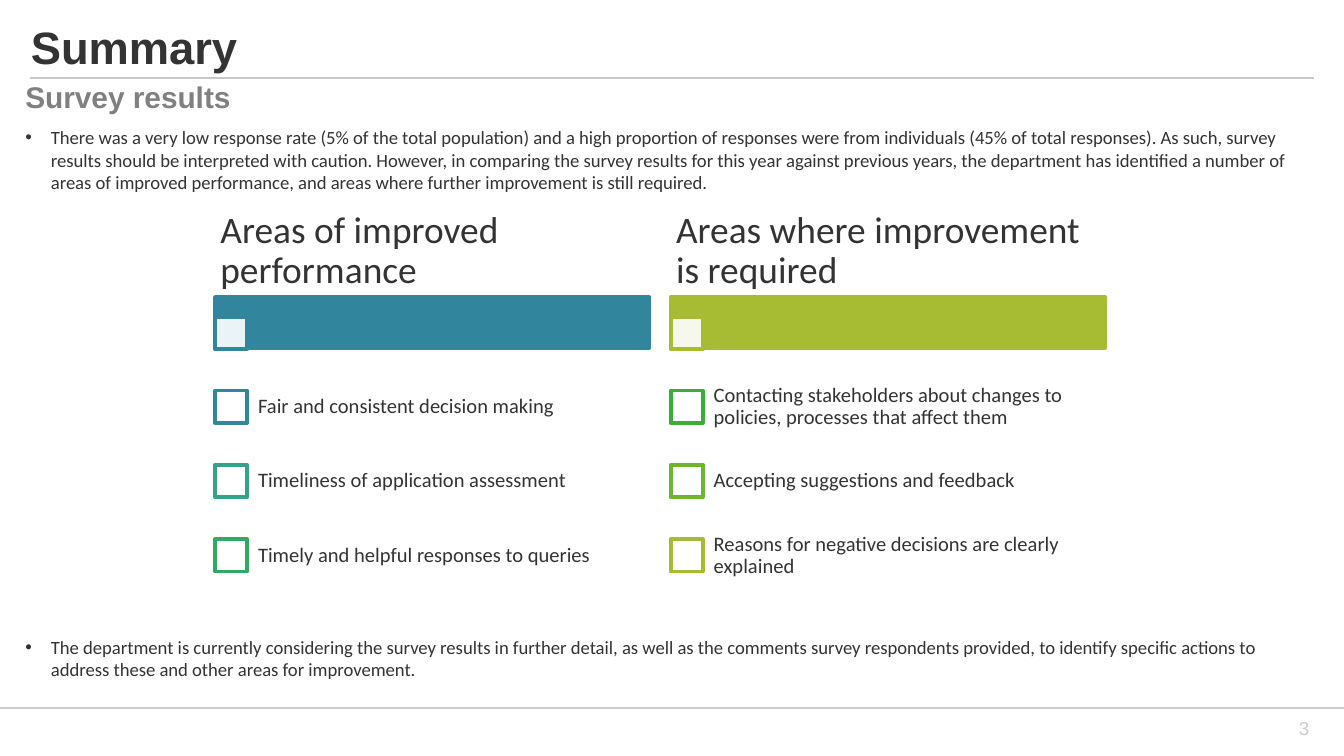
from lxml import etree
from pptx import Presentation
from pptx.dml.color import RGBColor
from pptx.enum import shapes, text
from pptx.oxml import ns
from pptx.util import Inches, Pt

WHITE = RGBColor(0xFF, 0xFF, 0xFF)
INK = RGBColor(0x33, 0x33, 0x33)
GREY = RGBColor(0x80, 0x80, 0x80)
RULE = RGBColor(0xC8, 0xC8, 0xC8)
PALE = RGBColor(0xCC, 0xCC, 0xCC)
BLUE = RGBColor(0x31, 0x85, 0x9C)
TEAL = RGBColor(0x32, 0xA2, 0x8C)
SEA = RGBColor(0x32, 0xA9, 0x60)
GREEN = RGBColor(0x36, 0xAF, 0x32)
LEAF = RGBColor(0x6C, 0xB5, 0x33)
OLIVE = RGBColor(0xA8, 0xBC, 0x33)

MIDDLE = text.MSO_ANCHOR.MIDDLE
INDENT = 0.19
SQUARE = 0.24
LIST_HEIGHT = 1.66

SURVEY_NOTE = (
    "There was a very low response rate (5% of the total population) and a high "
    "proportion of responses were from individuals (45% of total responses). As such, "
    "survey results should be interpreted with caution. However, in comparing the survey "
    "results for this year against previous years, the department has identified a number "
    "of areas of improved performance, and areas where further improvement is still required."
)
NEXT_STEPS = (
    "The department is currently considering the survey results in further detail, as well "
    "as the comments survey respondents provided, to identify specific actions to address "
    "these and other areas for improvement."
)
COLUMNS = [
    ("Areas of improved performance", BLUE, [
        ("Fair and consistent decision making", BLUE),
        ("Timeliness of application assessment", TEAL),
        ("Timely and helpful responses to queries", SEA),
    ]),
    ("Areas where improvement is required", OLIVE, [
        ("Contacting stakeholders about changes to policies, processes that affect them", GREEN),
        ("Accepting suggestions and feedback", LEAF),
        ("Reasons for negative decisions are clearly explained", OLIVE),
    ]),
]


def add_line(page, left, right, top, color, width):
    line = page.shapes.add_connector(
        shapes.MSO_CONNECTOR.STRAIGHT, Inches(left), Inches(top), Inches(right), Inches(top))
    line.line.color.rgb = color
    line.line.width = Pt(width)
    etree.SubElement(line._element.spPr, ns.qn("a:effectLst"))


def add_frame(page, box, insets=(0.1, 0.05, 0.1, 0.05), anchor=text.MSO_ANCHOR.TOP):
    """Add an empty wrapping text box; insets run left, top, right, bottom."""
    frame = page.shapes.add_textbox(*map(Inches, box)).text_frame
    frame.word_wrap = True
    frame.vertical_anchor = anchor
    (frame.margin_left, frame.margin_top,
     frame.margin_right, frame.margin_bottom) = map(Inches, insets)
    return frame


def write(para, words, size, color=INK, name="Calibri", bold=False):
    para.text = words
    font = para.runs[0].font
    font.size, font.name, font.bold = Pt(size), name, bold
    font.color.rgb = color


def write_bullet(para, words):
    props = para._p.get_or_add_pPr()
    props.set("marL", str(Inches(INDENT)))
    props.set("indent", str(-Inches(INDENT)))
    etree.SubElement(props, ns.qn("a:buFont")).set("typeface", "Arial")
    etree.SubElement(props, ns.qn("a:buChar")).set("char", "•")
    write(para, words, 10)


def add_rect(page, box, fill, line, opacity=100):
    rect = page.shapes.add_shape(shapes.MSO_SHAPE.RECTANGLE, *map(Inches, box))
    rect.shadow.inherit = False
    rect.fill.solid()
    rect.fill.fore_color.rgb = fill
    rect.line.color.rgb = line
    rect.line.width = Pt(2)
    if opacity < 100:
        color = rect._element.spPr.find(ns.qn("a:solidFill"))[0]
        etree.SubElement(color, ns.qn("a:alpha")).set("val", str(opacity * 1000))


def add_header(page, left, top, width):
    title = add_frame(page, (left + 0.01, top, 9, 0.43), (0, 0.05, 0.1, 0.05), MIDDLE)
    write(title.paragraphs[0], "Summary", 24.3, name="Arial", bold=True)
    add_line(page, left, left + width, top + 0.45, RULE, 0.75)


def add_introduction(page, box):
    frame = add_frame(page, box)
    heading = frame.paragraphs[0]
    write(heading, "Survey results", 16, GREY, "Arial", True)
    heading.space_after = Pt(6)
    write_bullet(frame.add_paragraph(), SURVEY_NOTE)


def add_column(page, left, top, width, heading, color, items):
    """Draw a heading over a coloured bar, then a row of square and label per item."""
    add_rect(page, (left, top + 0.68, width, 0.38), color, color)
    add_rect(page, (left, top + 0.83, SQUARE, SQUARE), WHITE, color, opacity=90)
    frame = add_frame(page, (left, top, width, 0.68), (0.04, 0.03, 0.04, 0.03), MIDDLE)
    write(frame.paragraphs[0], heading, 20)
    frame.paragraphs[0].line_spacing = 0.9

    row_height = LIST_HEIGHT / len(items)
    for row, (label, outline) in enumerate(items):
        row_top = top + 1.22 + row * row_height
        square_top = row_top + (row_height - SQUARE) / 2
        add_rect(page, (left, square_top, SQUARE, SQUARE), WHITE, outline)
        frame = add_frame(page, (left + 0.23, row_top, width - 0.23, row_height),
                          (0.09,) * 4, MIDDLE)
        write(frame.paragraphs[0], label, 11)
        frame.paragraphs[0].line_spacing = 0.9


def add_comparison(page, left, top, column_width, gap):
    for index, column in enumerate(COLUMNS):
        add_column(page, left + index * (column_width + gap), top, column_width, *column)


def add_footer(page, top):
    add_line(page, 0, 10, top, PALE, 1)
    number = add_frame(page, (9.11, top, 0.73, 0.3), anchor=MIDDLE).paragraphs[0]
    write(number, "3", 10, PALE, "Arial")
    number.alignment = text.PP_ALIGN.RIGHT


def main():
    deck = Presentation()
    deck.slide_width = Inches(10)
    deck.slide_height = deck.slide_width * 9 // 16
    page = deck.slides.add_slide(deck.slide_layouts[6])
    add_footer(page, 5.27)
    add_header(page, 0.22, 0.13, 9.56)
    add_introduction(page, (0.09, 0.54, 9.82, 0.96))
    add_comparison(page, 1.6, 1.53, 3.23, 0.16)
    write_bullet(add_frame(page, (0.09, 4.68, 9.69, 0.44)).paragraphs[0], NEXT_STEPS)
    deck.save("out.pptx")


if __name__ == "__main__":
    main()
